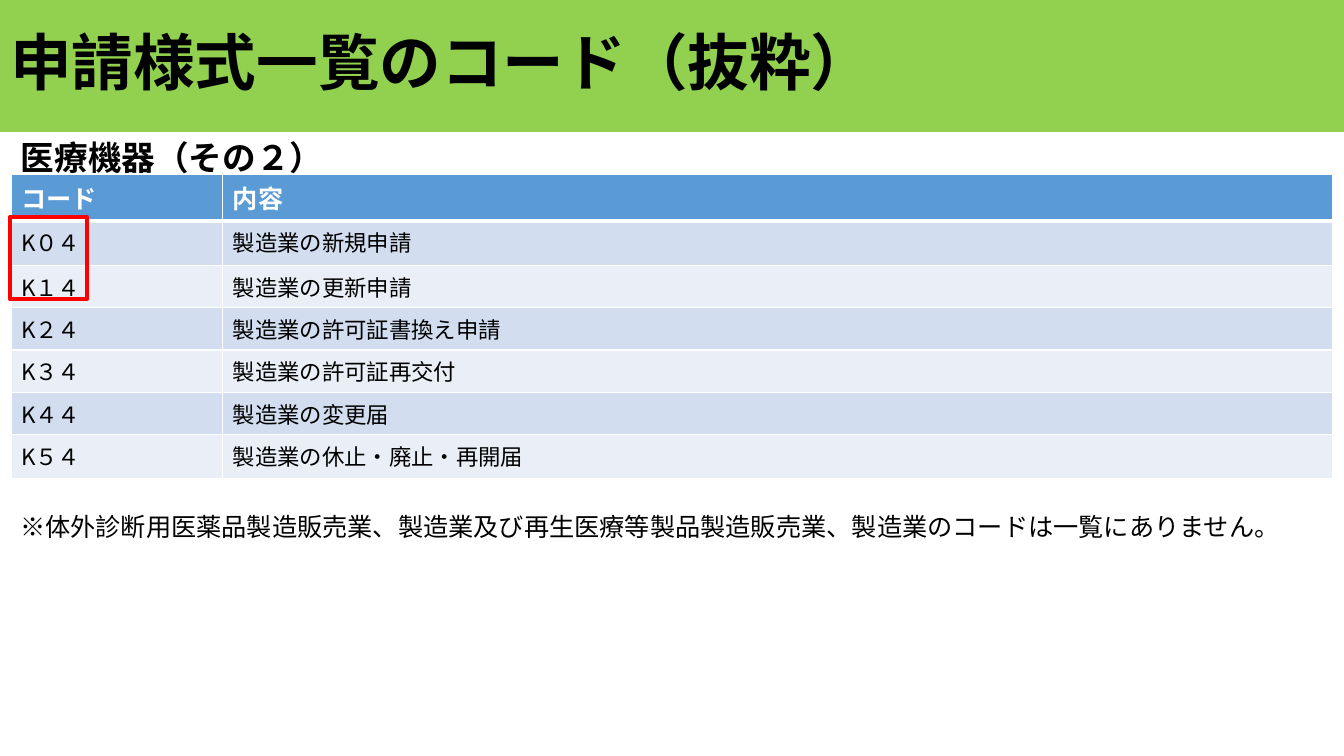
from lxml.etree import SubElement
from pptx import Presentation
from pptx.dml.color import RGBColor
from pptx.enum.shapes import MSO_SHAPE as Preset
from pptx.enum.text import MSO_ANCHOR as Anchor, MSO_AUTO_SIZE as AutoSize, PP_ALIGN as Align
from pptx.oxml.ns import qn
from pptx.util import Inches, Pt

COLORS = {
    "banner": "92D050", "header": "5B9BD5", "odd": "D2DEEF", "even": "EAEFF7",
    "ink": "000000", "white": "FFFFFF", "mark": "FF0000",
}
FORMS = [
    ("コード", "内容"),
    ("K０４", "製造業の新規申請"),
    ("K１４", "製造業の更新申請"),
    ("K２４", "製造業の許可証書換え申請"),
    ("K３４", "製造業の許可証再交付"),
    ("K４４", "製造業の変更届"),
    ("K５４", "製造業の休止・廃止・再開届"),
]
COLUMN_WIDTHS = (2.1, 11.01)
ROW_HEIGHTS = (0.4, 0.44, 0.42, 0.42, 0.42, 0.42, 0.43)


def rgb(name):
    return RGBColor.from_string(COLORS[name])


def box(*lengths):
    return [Inches(length) for length in lengths]


class SlideBuilder:
    font_name = "Noto Sans CJK JP"

    def __init__(self, slide):
        self.slide = slide

    def set_text(self, frame, text, size, color="ink", bold=False):
        frame.text = text
        paragraph = frame.paragraphs[0]
        paragraph.alignment = Align.LEFT
        run = paragraph.runs[0]
        font = run.font
        font.name, font.size, font.bold = self.font_name, Pt(size), bold
        font.color.rgb = rgb(color)
        # East Asian typeface
        SubElement(font._element, qn("a:ea"), typeface=self.font_name)
        return paragraph

    def title(self, text, area):
        banner = self.slide.shapes.title
        banner.left, banner.top, banner.width, banner.height = box(*area)
        banner.fill.solid()
        banner.fill.fore_color.rgb = rgb("banner")
        frame = banner.text_frame
        frame.auto_size = AutoSize.NONE
        frame.vertical_anchor = Anchor.MIDDLE
        self.set_text(frame, text, 44, bold=True).line_spacing = 0.9

    def label(self, text, area, size, bold=False):
        frame = self.slide.shapes.add_textbox(*box(*area)).text_frame
        frame.word_wrap = True
        frame.auto_size = AutoSize.SHAPE_TO_FIT_TEXT
        self.set_text(frame, text, size, bold=bold)

    def highlight(self, area):
        outline = self.slide.shapes.add_shape(Preset.RECTANGLE, *box(*area))
        outline.shadow.inherit = False
        outline.fill.background()
        outline.line.color.rgb = rgb("mark")
        outline.line.width = Pt(3)

    def borders(self, cell, bottom):
        properties = cell._tc.get_or_add_tcPr()
        for side, width in (("L", 1), ("R", 1), ("T", 1), ("B", bottom)):
            line = SubElement(properties, qn(f"a:ln{side}"), w=str(Pt(width)))
            fill = SubElement(line, qn("a:solidFill"))
            SubElement(fill, qn("a:srgbClr"), val=COLORS["white"])

    def table(self, rows, left, top):
        area = box(left, top, sum(COLUMN_WIDTHS), sum(ROW_HEIGHTS))
        grid = self.slide.shapes.add_table(len(rows), len(COLUMN_WIDTHS), *area).table
        for column, width in zip(grid.columns, COLUMN_WIDTHS):
            column.width = Inches(width)
        for row, height in zip(grid.rows, ROW_HEIGHTS):
            row.height = Inches(height)
        for r, values in enumerate(rows):
            header = r == 0
            shade = "header" if header else "odd" if r % 2 else "even"
            for c, value in enumerate(values):
                cell = grid.cell(r, c)
                self.borders(cell, 3 if header else 1)
                cell.fill.solid()
                cell.fill.fore_color.rgb = rgb(shade)
                self.set_text(cell.text_frame, value, 18 if header else 16,
                              "white" if header else "ink", header)


def main():
    deck = Presentation()
    deck.slide_width, deck.slide_height = box(13.33, 7.5)
    builder = SlideBuilder(deck.slides.add_slide(deck.slide_layouts[5]))

    # Title banner
    builder.title("申請様式一覧のコード（抜粋）", (0, 0, 13.33, 1.31))

    # Code list with its heading
    builder.table(FORMS, 0.11, 1.73)
    builder.label("医療機器（その２）", (0.11, 1.31, 3.34, 0.5), 24, bold=True)

    # Highlight around the first two codes
    builder.highlight((0.1, 2.15, 0.76, 0.82))

    # Footnote
    builder.label("※体外診断用医薬品製造販売業、製造業及び再生医療等製品製造販売業、"
                  "製造業のコードは一覧にありません。", (0.1, 5.02, 12.98, 0.4), 18)

    deck.save("out.pptx")


if __name__ == "__main__":
    main()
